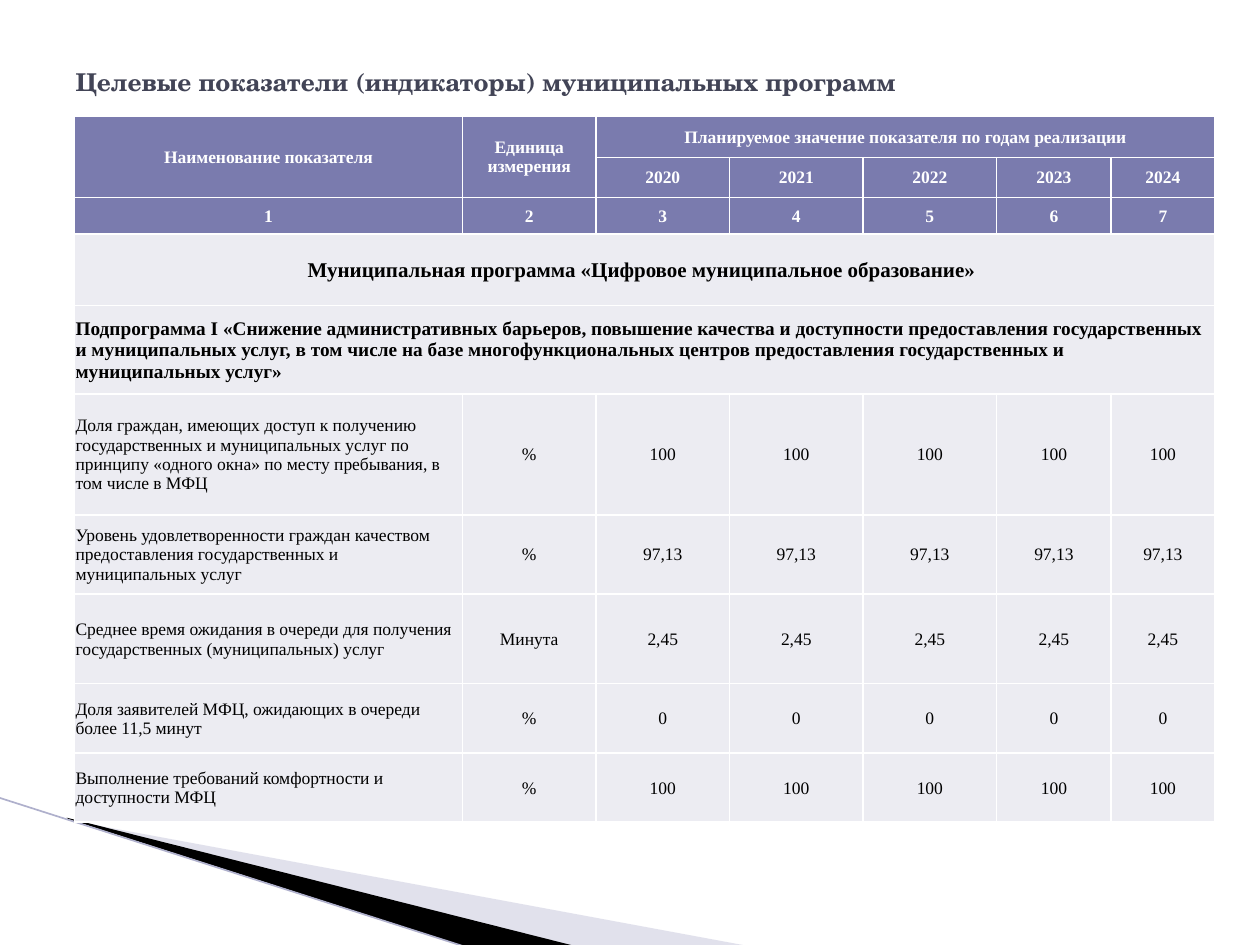
from typing import NamedTuple

from lxml import etree
from pptx import Presentation
from pptx.dml.color import RGBColor
from pptx.enum.shapes import MSO_CONNECTOR
from pptx.enum.text import MSO_ANCHOR, PP_ALIGN
from pptx.oxml.ns import qn
from pptx.util import Inches, Pt

LEFT, CENTER = PP_ALIGN.LEFT, PP_ALIGN.CENTER
MIDDLE = MSO_ANCHOR.MIDDLE
STRAIGHT = MSO_CONNECTOR.STRAIGHT

SERIF, TITLE_FONT = "Times New Roman", "TeX Gyre Schola"
WHITE, BLACK = "FFFFFF", "000000"
HEADER, BODY = "7A7BAE", "ECECF2"

COLUMNS = [3.08, 1.06, 1.06, 1.06, 1.06, 0.91, 0.82]
ROWS = [0.33, 0.24, 0.29, 0.57, 0.7, 0.96, 0.63, 0.71, 0.55, 0.55]
YEARS = range(2020, 2025)
FIRST_INDICATOR_ROW = 5


class Indicator(NamedTuple):
    name: str
    unit: str
    value: str  # the same in every planned year


class Wedge(NamedTuple):
    points: list[tuple[float, float]]
    color: str
    opacity: int


INDICATORS = [
    Indicator("Доля граждан, имеющих доступ к получению государственных и муниципальных "
              "услуг по принципу «одного окна» по месту пребывания, в том числе в МФЦ",
              "%", "100"),
    Indicator("Уровень удовлетворенности граждан качеством предоставления "
              "государственных и муниципальных услуг", "%", "97,13"),
    Indicator("Среднее время ожидания в очереди для получения государственных "
              "(муниципальных) услуг", "Минута", "2,45"),
    Indicator("Доля заявителей МФЦ, ожидающих в очереди более 11,5 минут", "%", "0"),
    Indicator("Выполнение требований комфортности и доступности МФЦ", "%", "100"),
]
PROGRAM = "Муниципальная программа «Цифровое муниципальное образование» "
SUBPROGRAM = ("Подпрограмма I «Снижение административных барьеров, повышение качества и "
              "доступности предоставления государственных и муниципальных услуг, в том "
              "числе на базе многофункциональных центров предоставления государственных "
              "и муниципальных услуг»")
WEDGES = [
    Wedge([(0.55, 6.51), (5.95, 7.51), (4.56, 7.51), (0.55, 6.5)], "B6B6D1", 40),
    Wedge([(0.53, 6.49), (4.57, 7.51), (3.72, 7.52), (0.54, 6.5)], BLACK, 100),
]


def set_color(color_format, value: str) -> None:
    color_format.rgb = RGBColor.from_string(value)


def set_fill(fill, value: str) -> None:
    fill.solid()
    set_color(fill.fore_color, value)


def write(tf, text: str, *, size: float = 10, font: str = SERIF, color: str = BLACK,
          bold: bool = False, align: PP_ALIGN = CENTER) -> None:
    p = tf.paragraphs[0]
    p.alignment = align
    r = p.add_run()
    r.text = text
    r.font.size, r.font.name, r.font.bold = Pt(size), font, bold
    set_color(r.font.color, color)


def draw_wedge(s, wedge: Wedge) -> None:
    points = [(Inches(x), Inches(y)) for x, y in wedge.points]
    builder = s.shapes.build_freeform(*points[0])
    builder.add_line_segments(points[1:], close=True)
    sp = builder.convert_to_shape()
    sp.shadow.inherit = False
    set_fill(sp.fill, wedge.color)
    sp.line.fill.background()
    if wedge.opacity < 100:
        color = sp.fill._xPr.find(qn("a:solidFill"))[0]
        etree.SubElement(color, qn("a:alpha"), val=str(wedge.opacity * 1000))


def draw_edge_line(s) -> None:
    line = s.shapes.add_connector(STRAIGHT, Inches(-0.01), Inches(6.33),
                                  Inches(3.71), Inches(7.52))
    set_color(line.line.color, "AFB0CC")
    line.line.width = Pt(0.95)
    etree.SubElement(line._element.spPr, qn("a:effectLst"))


def add_borders(cell) -> None:
    """Put white borders before the fill, as the schema orders them."""
    tc_pr = cell._tc.get_or_add_tcPr()
    for i, side in enumerate(("a:lnL", "a:lnR", "a:lnT", "a:lnB")):
        ln = etree.Element(qn(side), w=str(Pt(1)))
        fill = etree.SubElement(ln, qn("a:solidFill"))
        etree.SubElement(fill, qn("a:srgbClr"), val=WHITE)
        tc_pr.insert(i, ln)


def style_cells(table) -> None:
    for i, row in enumerate(table.rows):
        for cell in row.cells:
            set_fill(cell.fill, HEADER if i < 3 else BODY)
            add_borders(cell)
            cell.vertical_anchor = MIDDLE
            cell.margin_left = cell.margin_right = cell.margin_top = Inches(0.01)
            cell.margin_bottom = 0


def write_header(table) -> None:
    labels = {(0, 0): "Наименование показателя", (0, 1): "Единица измерения",
              (0, 2): "Планируемое значение показателя по годам реализации"}
    labels |= {(1, j): str(year) for j, year in enumerate(YEARS, 2)}
    labels |= {(2, j): str(j + 1) for j in range(len(COLUMNS))}
    for (i, j), text in labels.items():
        write(table.cell(i, j).text_frame, text, color=WHITE, bold=True)


def draw_table(s) -> None:
    table = s.shapes.add_table(len(ROWS), len(COLUMNS), Inches(0.59), Inches(0.92),
                               Inches(sum(COLUMNS)), Inches(sum(ROWS))).table
    for column, width in zip(table.columns, COLUMNS):
        column.width = Inches(width)
    for row, height in zip(table.rows, ROWS):
        row.height = Inches(height)
    style_cells(table)
    last = len(COLUMNS) - 1
    for start, end in [((0, 0), (1, 0)), ((0, 1), (1, 1)), ((0, 2), (0, last)),
                       ((3, 0), (3, last)), ((4, 0), (4, last))]:
        table.cell(*start).merge(table.cell(*end))

    write_header(table)
    write(table.cell(3, 0).text_frame, PROGRAM, size=12, bold=True)
    write(table.cell(4, 0).text_frame, SUBPROGRAM, size=11, bold=True, align=LEFT)
    for i, item in enumerate(INDICATORS, FIRST_INDICATOR_ROW):
        texts = [item.name, item.unit] + [item.value] * len(YEARS)
        for j, text in enumerate(texts):
            write(table.cell(i, j).text_frame, text, align=CENTER if j else LEFT)


def draw_title(s) -> None:
    title = s.shapes.title
    title.left, title.top = Inches(0.5), Inches(0.3)
    title.width, title.height = Inches(9), Inches(0.69)
    tf = title.text_frame
    tf.word_wrap = True
    tf.vertical_anchor = MIDDLE
    write(tf, "Целевые показатели (индикаторы) муниципальных программ", size=14,
          font=TITLE_FONT, color="424456", bold=True, align=LEFT)


def main() -> None:
    prs = Presentation()
    prs.slide_width, prs.slide_height = Inches(10), Inches(7.5)
    s = prs.slides.add_slide(prs.slide_layouts[5])
    for wedge in WEDGES:
        draw_wedge(s, wedge)
    draw_edge_line(s)
    draw_title(s)
    draw_table(s)
    prs.save("out.pptx")


if __name__ == "__main__":
    main()
